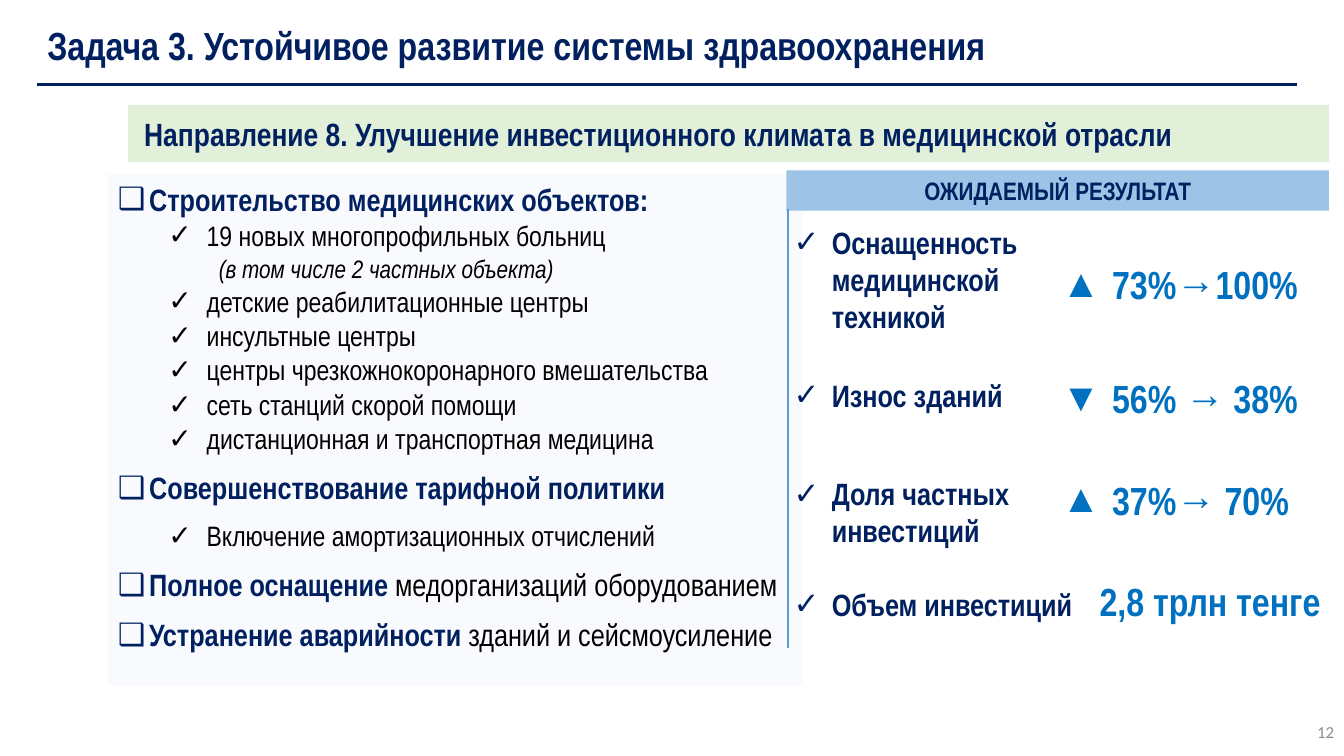
from lxml.etree import SubElement
from pptx import Presentation
from pptx.dml.color import RGBColor
from pptx.enum.shapes import MSO_CONNECTOR, MSO_SHAPE
from pptx.enum.text import MSO_ANCHOR, MSO_AUTO_SIZE, PP_ALIGN
from pptx.oxml.ns import qn
from pptx.util import Inches, Pt

COLORS = {
    "navy": "002060", "black": "000000", "blue": "0070C0", "gray": "8C8C8C",
    "green": "E2F0D9", "panel": "F9FAFD", "header": "9DC3E6", "divider": "5B9BD5",
}
FONT = "Arial Narrow"

TITLE = "Задача 3. Устойчивое развитие системы здравоохранения"
DIRECTION = "Направление 8. Улучшение инвестиционного климата в медицинской отрасли"
RESULT_HEADER = "ОЖИДАЕМЫЙ РЕЗУЛЬТАТ"
PAGE_NUMBER = "12"

MEASURES = [
    ("topic", ["Строительство медицинских объектов:"], 3),
    ("item", ["19 новых многопрофильных больниц"], 3),
    ("note", ["(в том числе 2 частных объекта)"], 3),
    ("item", ["детские реабилитационные центры"], 3),
    ("item", ["инсультные центры"], 3),
    ("item", ["центры чрезкожнокоронарного вмешательства"], 3),
    ("item", ["сеть станций скорой помощи"], 3),
    ("item", ["дистанционная и транспортная медицина"], 12),
    ("topic", ["Совершенствование тарифной политики"], 12),
    ("item", ["Включение амортизационных отчислений"], 12),
    ("topic", ["Полное оснащение ", "медорганизаций оборудованием"], 12),
    ("topic", ["Устранение аварийности ", "зданий и сейсмоусиление"], 12),
]
INDICATORS = [
    ("indicator", ["Оснащенность медицинской техникой"], 30),
    ("indicator", ["Износ зданий"], 44),
    ("indicator", ["Доля частных инвестиций"], 26),
    ("indicator", ["Объем инвестиций"], 0),
]
VALUES = [
    ("growth", ["73%→100%"], 48),
    ("decline", ["56% → 38%"], 39),
    ("growth", ["37%→ 70%"], 39),
    ("total", ["2,8 трлн тенге"], 0),
]
# kind: level, bullet, left margin, first-line indent, size, colour, bold, italic
STYLES = {
    "topic": (0, "❑", 0.31, -0.31, 22, "navy", True, False),
    "item": (1, "✓", 0.88, -0.38, 20, "black", False, False),
    "note": (2, None, 1, 0, 18, "black", False, True),
    "indicator": (0, "✓", 0.38, -0.38, 22, "navy", True, False),
    "growth": (0, "▲", 0.5, -0.5, 28, "blue", True, False),
    "decline": (0, "▼", 0.5, -0.5, 28, "blue", True, False),
    "total": (0, None, 0, 0, 28, "blue", True, False),
}


def color(name):
    return RGBColor.from_string(COLORS[name])


def place(box, left, top, width, height):
    box.left, box.top = Inches(left), Inches(top)
    box.width, box.height = Inches(width), Inches(height)


def set_frame(box, insets, anchor=MSO_ANCHOR.TOP):
    frame = box.text_frame
    frame.word_wrap = True
    frame.auto_size = MSO_AUTO_SIZE.NONE
    frame.vertical_anchor = anchor
    frame.margin_left, frame.margin_top, frame.margin_right, frame.margin_bottom = map(Inches, insets)
    return frame


def set_font(target, size, tint, bold=False, italic=False, name=FONT):
    font = target.font
    font.name, font.size, font.bold, font.italic = name, Pt(size), bold, italic
    font.color.rgb = color(tint)


def write_line(box, text, size, tint, bold, align, insets=(0.1, 0.05, 0.1, 0.05), name=FONT):
    para = set_frame(box, insets, MSO_ANCHOR.MIDDLE).paragraphs[0]
    para.text = text
    para.alignment = align
    set_font(para, size, tint, bold, name=name)


def write_list(box, entries, insets, line_spacing):
    frame = set_frame(box, insets)
    for index, (kind, spans, gap) in enumerate(entries):
        level, bullet, margin, indent, size, tint, bold, italic = STYLES[kind]
        para = frame.add_paragraph() if index else frame.paragraphs[0]
        properties = para._p.get_or_add_pPr()
        properties.set("marL", str(Inches(margin)))
        properties.set("indent", str(Inches(indent)))
        if bullet:
            SubElement(properties, qn("a:buFont"), typeface="Arial")
            SubElement(properties, qn("a:buChar"), char=bullet)
        else:
            SubElement(properties, qn("a:buNone"))
        para.level = level
        para.alignment = PP_ALIGN.CENTER if kind == "total" else PP_ALIGN.LEFT
        para.line_spacing, para.space_before, para.space_after = line_spacing, Pt(0), Pt(gap)
        runs = []
        for text in spans:
            span = para.add_run()
            span.text = text
            runs.append(span)
        if len(runs) == 1:
            set_font(para, size, tint, bold, italic)
        else:
            set_font(runs[0], size, tint, bold)
            set_font(runs[1], size, "black")


def add_bar(page, area, fill):
    bar = page.shapes.add_shape(MSO_SHAPE.RECTANGLE, *map(Inches, area))
    bar.shadow.inherit = False
    bar.fill.solid()
    bar.fill.fore_color.rgb = color(fill)
    bar.line.fill.background()
    return bar


def add_rule(page, ends, tint, width):
    rule = page.shapes.add_connector(MSO_CONNECTOR.STRAIGHT, *map(Inches, ends))
    rule.line.color.rgb = color(tint)
    rule.line.width = Pt(width)
    SubElement(rule._element.spPr, qn("a:effectLst"))


def main():
    deck = Presentation()
    deck.slide_width, deck.slide_height = Inches(13.33), Inches(7.5)
    page = deck.slides.add_slide(deck.slide_layouts.get_by_name("Two Content"))
    title, measures, indicators = page.placeholders

    place(title, 0.37, 0.03, 11.34, 0.82)
    write_line(title, TITLE, 28, "navy", True, PP_ALIGN.LEFT)
    add_rule(page, (12.86, 0.84, 0.37, 0.84), "navy", 2.25)

    direction = add_bar(page, (1.27, 1.04, 11.91, 0.57), "green")
    write_line(direction, DIRECTION, 23, "navy", True, PP_ALIGN.LEFT, (0.16, 0.09, 0.16, 0.09))

    place(measures, 1.07, 1.73, 6.89, 5.07)
    measures.fill.solid()
    measures.fill.fore_color.rgb = color("panel")
    panel_color = measures._element.spPr.find(".//" + qn("a:srgbClr"))
    SubElement(panel_color, qn("a:alpha"), val="90000")
    write_list(measures, MEASURES, (0.1, 0.1, 0.14, 0.16), 0.9)

    header = add_bar(page, (7.8, 1.69, 5.38, 0.4), "header")
    write_line(header, RESULT_HEADER, 18, "navy", True, PP_ALIGN.CENTER)
    add_rule(page, (7.82, 2.07, 7.82, 6.43), "divider", 1.5)

    place(indicators, 7.83, 2.17, 2.82, 4.11)
    write_list(indicators, INDICATORS, (0.04, 0.05, 0, 0.05), 1)
    values = page.shapes.add_textbox(*map(Inches, (10.49, 2.53, 2.98, 3.75)))
    write_list(values, VALUES, (0.04, 0.05, 0, 0.05), 1)

    number = page.shapes.add_textbox(*map(Inches, (12.74, 7.04, 0.59, 0.44)))
    write_line(number, PAGE_NUMBER, 12, "gray", False, PP_ALIGN.RIGHT, name="Calibri")
    deck.save("out.pptx")


if __name__ == "__main__":
    main()
